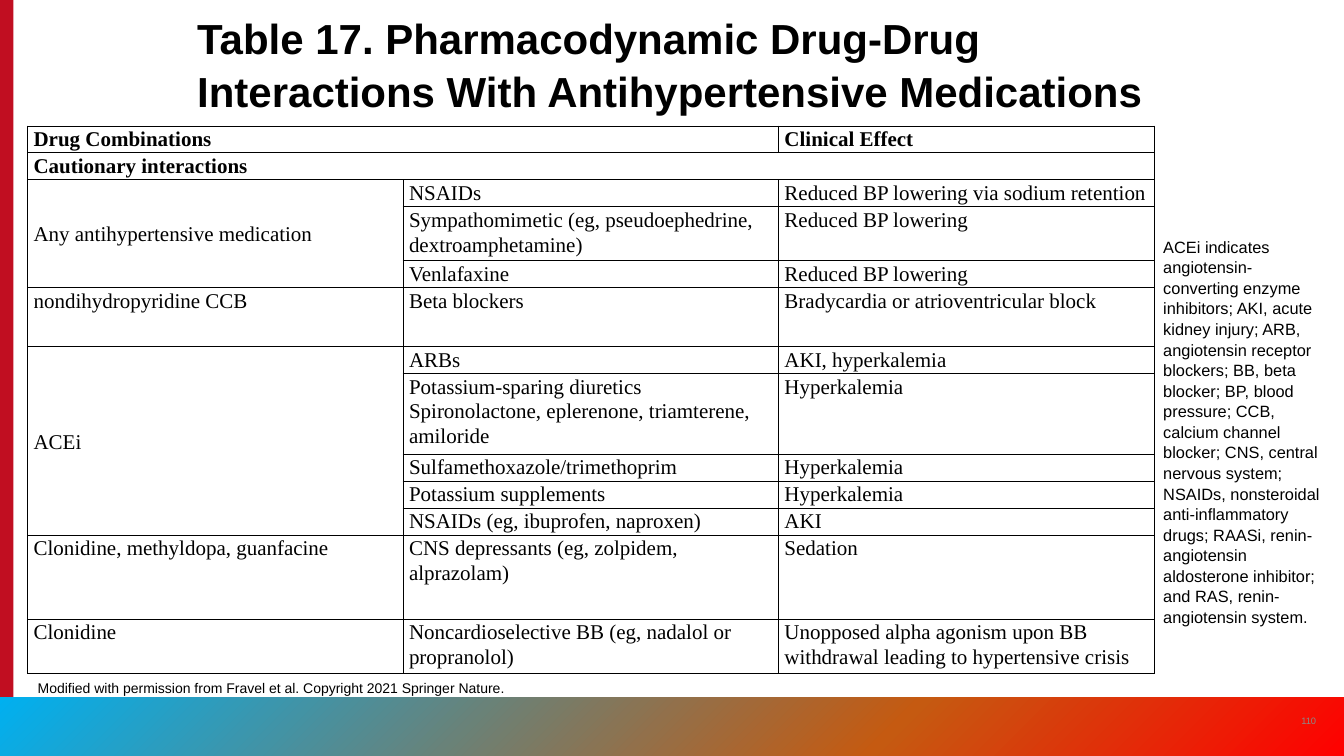
from lxml import etree
from pptx import Presentation
from pptx.dml.color import RGBColor
from pptx.enum.shapes import MSO_SHAPE
from pptx.enum.text import MSO_ANCHOR, PP_ALIGN
from pptx.oxml.ns import qn
from pptx.util import Inches, Pt

RECT = MSO_SHAPE.RECTANGLE
TOP, MIDDLE, BOTTOM = MSO_ANCHOR.TOP, MSO_ANCHOR.MIDDLE, MSO_ANCHOR.BOTTOM
LEFT, CENTER = PP_ALIGN.LEFT, PP_ALIGN.CENTER

THEME = {
    "sans": "Arial", "serif": "Times New Roman",
    "ink": "000000", "gray": "8A8B8A", "red": "C10E21",
    "band": [(0, "00B0F0"), (0.66, "C55A11"), (1, "FF0000")],
    "title": 36, "table": 18, "key": 14, "credit": 12, "number": 8,
    "border": 1,
}

TITLE = "Table 17. Pharmacodynamic Drug-Drug Interactions With Antihypertensive Medications"
KEY = (
    "ACEi indicates angiotensin-converting enzyme inhibitors; AKI, acute kidney injury; "
    "ARB, angiotensin receptor blockers; BB, beta blocker; BP, blood pressure; "
    "CCB, calcium channel blocker; CNS, central nervous system; "
    "NSAIDs, nonsteroidal anti-inflammatory drugs; "
    "RAASi, renin-angiotensin aldosterone inhibitor; and RAS, renin-angiotensin system."
)
CREDIT = "Modified with permission from Fravel et al. Copyright 2021 Springer Nature."
NUMBER = "110"

# Row height in inches, then the three cells
ROWS = [
    (0.29, "Drug Combinations", "", "Clinical Effect"),
    (0.29, "Cautionary interactions", "", ""),
    (0.29, "Any antihypertensive medication", "NSAIDs",
     "Reduced BP lowering via sodium retention"),
    (0.59, "", "Sympathomimetic (eg, pseudoephedrine, dextroamphetamine)",
     "Reduced BP lowering"),
    (0.29, "", "Venlafaxine", "Reduced BP lowering"),
    (0.7, "nondihydropyridine CCB", "Beta blockers",
     "Bradycardia or atrioventricular block"),
    (0.29, "ACEi", "ARBs", "AKI, hyperkalemia"),
    (0.89, "", "Potassium-sparing diuretics Spironolactone, eplerenone, triamterene, amiloride",
     "Hyperkalemia"),
    (0.29, "", "Sulfamethoxazole/trimethoprim", "Hyperkalemia"),
    (0.29, "", "Potassium supplements", "Hyperkalemia"),
    (0.29, "", "NSAIDs (eg, ibuprofen, naproxen)", "AKI"),
    (1, "Clonidine, methyldopa, guanfacine",
     "CNS depressants (eg, zolpidem, alprazolam)", "Sedation"),
    (0.59, "Clonidine", "Noncardioselective BB (eg, nadalol or propranolol)",
     "Unopposed alpha agonism upon BB withdrawal leading to hypertensive crisis"),
]
MERGES = [((0, 0), (0, 1)), ((1, 0), (1, 2)), ((2, 0), (4, 0)), ((6, 0), (10, 0))]
HEADS = 2
COLS = 3
COL_W = 4.47


def style(para, font, size, color="ink", bold=False):
    para.font.name = THEME[font]
    para.font.size = Pt(THEME[size])
    para.font.bold = bold
    para.font.color.rgb = RGBColor.from_string(THEME[color])


def add_text(slide, box, text, size, color="ink", bold=False,
             anchor=TOP, align=LEFT, pitch=1.0):
    frame = slide.shapes.add_textbox(*map(Inches, box)).text_frame
    frame.word_wrap = True
    frame.vertical_anchor = anchor
    para = frame.paragraphs[0]
    para.text = text
    para.alignment = align
    para.line_spacing = pitch
    style(para, "sans", size, color, bold)


def add_bar(slide, box):
    bar = slide.shapes.add_shape(RECT, *map(Inches, box))
    bar.shadow.inherit = False
    bar.line.fill.background()
    return bar


def add_band(slide, box):
    """Add a bar with a three-stop diagonal gradient."""
    fill = add_bar(slide, box).fill
    fill.gradient()
    fill.gradient_angle = 315
    first, last = fill.gradient_stops
    for stop, (place, color) in zip((first, last), THEME["band"][::2]):
        stop.position = place
        stop.color.rgb = RGBColor.from_string(color)
    place, color = THEME["band"][1]
    mid = etree.Element(qn("a:gs"), pos=str(int(place * 100000)))
    etree.SubElement(mid, qn("a:srgbClr"), val=color)
    slide.shapes[-1].element.find(".//" + qn("a:gsLst")).insert(1, mid)


def add_border(cell):
    props = cell._tc.get_or_add_tcPr()
    for i, side in enumerate(("lnL", "lnR", "lnT", "lnB")):
        line = etree.Element(qn("a:" + side), w=str(Pt(THEME["border"])))
        paint = etree.SubElement(line, qn("a:solidFill"))
        etree.SubElement(paint, qn("a:srgbClr"), val=THEME["ink"])
        props.insert(i, line)


def add_grid(slide, left, top):
    high = sum(row[0] for row in ROWS)
    grid = slide.shapes.add_table(
        len(ROWS), COLS, *map(Inches, (left, top, COLS * COL_W, high))).table
    grid.first_row = grid.horz_banding = False
    for col in grid.columns:
        col.width = Inches(COL_W)
    for r, (tall, *texts) in enumerate(ROWS):
        grid.rows[r].height = Inches(tall)
        for c, text in enumerate(texts):
            cell = grid.cell(r, c)
            cell.fill.background()
            cell.margin_left = cell.margin_right = Inches(0.07)
            cell.margin_top = cell.margin_bottom = 0
            add_border(cell)
            para = cell.text_frame.paragraphs[0]
            para.text = text
            para.line_spacing = 1.07
            para.space_after = Pt(8)
            style(para, "serif", "table", bold=r < HEADS)
    for start, end in MERGES:
        cell = grid.cell(*start)
        cell.merge(grid.cell(*end))
        if end[0] > start[0]:
            cell.vertical_anchor = MIDDLE


def main():
    deck = Presentation()
    deck.slide_width, deck.slide_height = Inches(16), Inches(9)
    slide = deck.slides.add_slide(deck.slide_layouts[6])

    edge = add_bar(slide, (0, 0, 0.16, 9))
    edge.fill.solid()
    edge.fill.fore_color.rgb = RGBColor.from_string(THEME["red"])
    add_band(slide, (0, 8.3, 16, 0.7))

    add_text(slide, (2.25, 0.18, 11.5, 1.25), TITLE, "title",
             bold=True, anchor=BOTTOM, pitch=1.05)
    add_grid(slide, 0.33, 1.5)
    add_text(slide, (13.75, 2.76, 2.07, 5.28), KEY, "key", pitch=1.05)
    add_text(slide, (0.35, 8.04, 8, 0.3), CREDIT, "credit")
    add_text(slide, (15.34, 8.34, 0.48, 0.48), NUMBER, "number", "gray",
             anchor=MIDDLE, align=CENTER)
    deck.save("out.pptx")


if __name__ == "__main__":
    main()
